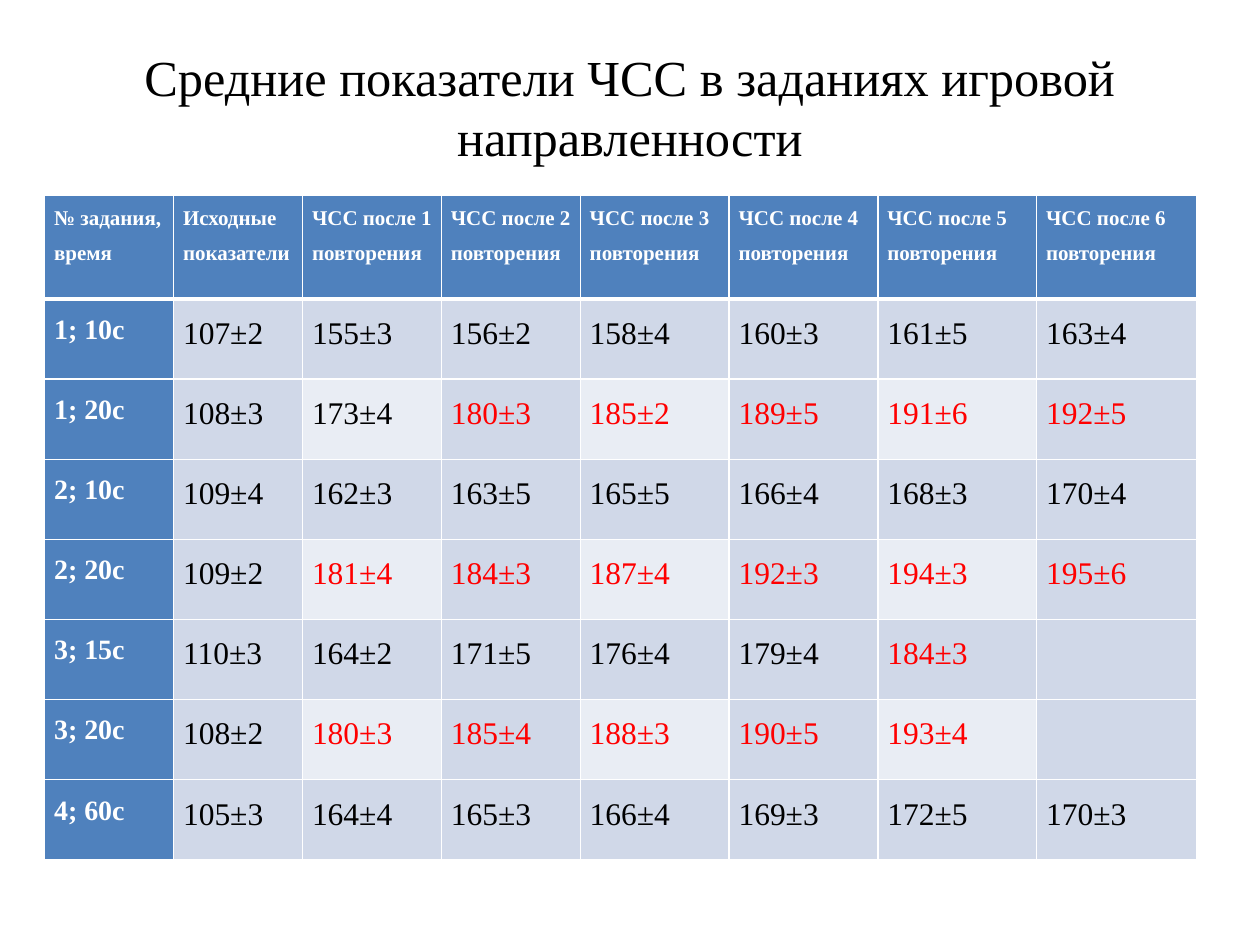
from dataclasses import dataclass

from lxml.etree import SubElement
from pptx import Presentation
from pptx.dml.color import RGBColor
from pptx.enum.text import MSO_ANCHOR, MSO_AUTO_SIZE, PP_ALIGN
from pptx.oxml.ns import qn
from pptx.util import Cm, Pt


@dataclass(frozen=True)
class Theme:
    font: str = "Times New Roman"
    black: str = "000000"
    white: str = "FFFFFF"
    alarm: str = "FF0000"
    accent: str = "4F81BD"
    band: str = "D0D8E8"
    light: str = "E9EDF4"
    title_size: float = 28.8
    header_size: float = 12
    task_size: float = 16
    value_size: float = 18
    thin: float = 1
    thick: float = 3


THEME = Theme()
TITLE = "Средние показатели ЧСС в заданиях игровой направленности"
HEADER = ["№ задания, время", "Исходные показатели"] + [
    f"ЧСС после {number} повторения" for number in range(1, 7)
]
RESULTS = [
    ["1; 10с", "107±2", "155±3", "156±2", "158±4", "160±3", "161±5", "163±4"],
    ["1; 20с", "108±3", "173±4", "180±3", "185±2", "189±5", "191±6", "192±5"],
    ["2; 10с", "109±4", "162±3", "163±5", "165±5", "166±4", "168±3", "170±4"],
    ["2; 20с", "109±2", "181±4", "184±3", "187±4", "192±3", "194±3", "195±6"],
    ["3; 15с", "110±3", "164±2", "171±5", "176±4", "179±4", "184±3", ""],
    ["3; 20с", "108±2", "180±3", "185±4", "188±3", "190±5", "193±4", ""],
    ["4; 60с", "105±3", "164±4", "165±3", "166±4", "169±3", "172±5", "170±3"],
]
COLUMN_WIDTHS = [2.6, 2.6, 2.8, 2.8, 3, 3, 3.2, 3.23]
HEADER_HEIGHT = 2.1
ALARM_RATE = 180


def style_text(para, size, color, bold=False):
    for span in para.runs:
        span.font.name = THEME.font
        span.font.size = Pt(size)
        span.font.bold = bold
        span.font.color.rgb = RGBColor.from_string(color)


def set_borders(cell, top, bottom):
    properties = cell._tc.get_or_add_tcPr()
    widths = {"L": THEME.thin, "R": THEME.thin, "T": top, "B": bottom}
    for index, (side, width) in enumerate(widths.items()):
        line = SubElement(properties, qn(f"a:ln{side}"), w=str(Pt(width)))
        fill = SubElement(line, qn("a:solidFill"))
        SubElement(fill, qn("a:srgbClr"), val=THEME.white)
        properties.insert(index, line)


def cell_look(row, column, text):
    if row == 0:
        return THEME.accent, THEME.header_size, THEME.white, True
    if column == 0:
        return THEME.accent, THEME.task_size, THEME.white, True
    is_light = row % 2 == 0 and column % 2 == 0 and column > 0 and text
    is_alarm = text and int(text.split("±")[0]) >= ALARM_RATE
    fill = THEME.light if is_light else THEME.band
    color = THEME.alarm if is_alarm else THEME.black
    return fill, THEME.value_size, color, False


def fill_cell(cell, row, column, text):
    fill, size, color, bold = cell_look(row, column, text)
    cell.fill.solid()
    cell.fill.fore_color.rgb = RGBColor.from_string(fill)
    cell.margin_left = cell.margin_right = Cm(0.19)
    cell.margin_top = cell.margin_bottom = 0
    cell.vertical_anchor = MSO_ANCHOR.TOP
    set_borders(
        cell,
        top=THEME.thick if row == 1 else THEME.thin,
        bottom=THEME.thick if row == 0 else THEME.thin,
    )
    para = cell.text_frame.paragraphs[0]
    para.text = text
    para.line_spacing = 1.5
    para.alignment = PP_ALIGN.LEFT if row == 0 else PP_ALIGN.JUSTIFY
    style_text(para, size, color, bold)


def place_title(page, left, top, width, height):
    title = page.shapes.title
    title.left, title.top = Cm(left), Cm(top)
    title.width, title.height = Cm(width), Cm(height)
    frame = title.text_frame
    frame.text = TITLE
    frame.word_wrap = True
    frame.auto_size = MSO_AUTO_SIZE.NONE
    frame.vertical_anchor = MSO_ANCHOR.MIDDLE
    para = frame.paragraphs[0]
    para.alignment = PP_ALIGN.CENTER
    style_text(para, THEME.title_size, THEME.black)


def place_results(page, left, top, width, height):
    records = [HEADER] + RESULTS
    frame = page.shapes.add_table(
        len(records), len(HEADER), Cm(left), Cm(top), Cm(width), Cm(height)
    )
    table = frame.table
    scale = width / sum(COLUMN_WIDTHS)
    for column, share in zip(table.columns, COLUMN_WIDTHS):
        column.width = Cm(share * scale)
    row_height = (height - HEADER_HEIGHT) / len(RESULTS)
    for row, record in enumerate(records):
        table.rows[row].height = Cm(row_height if row else HEADER_HEIGHT)
        for column, text in enumerate(record):
            fill_cell(table.cell(row, column), row, column, text)


def main():
    deck = Presentation()
    deck.slide_width, deck.slide_height = Cm(25.4), Cm(19.05)
    page = deck.slides.add_slide(deck.slide_layouts[5])
    place_title(page, 1.27, 0.76, 22.86, 2.77)
    place_results(page, 0.9, 3.93, 23.23, 13.4)
    deck.save("out.pptx")


if __name__ == "__main__":
    main()
